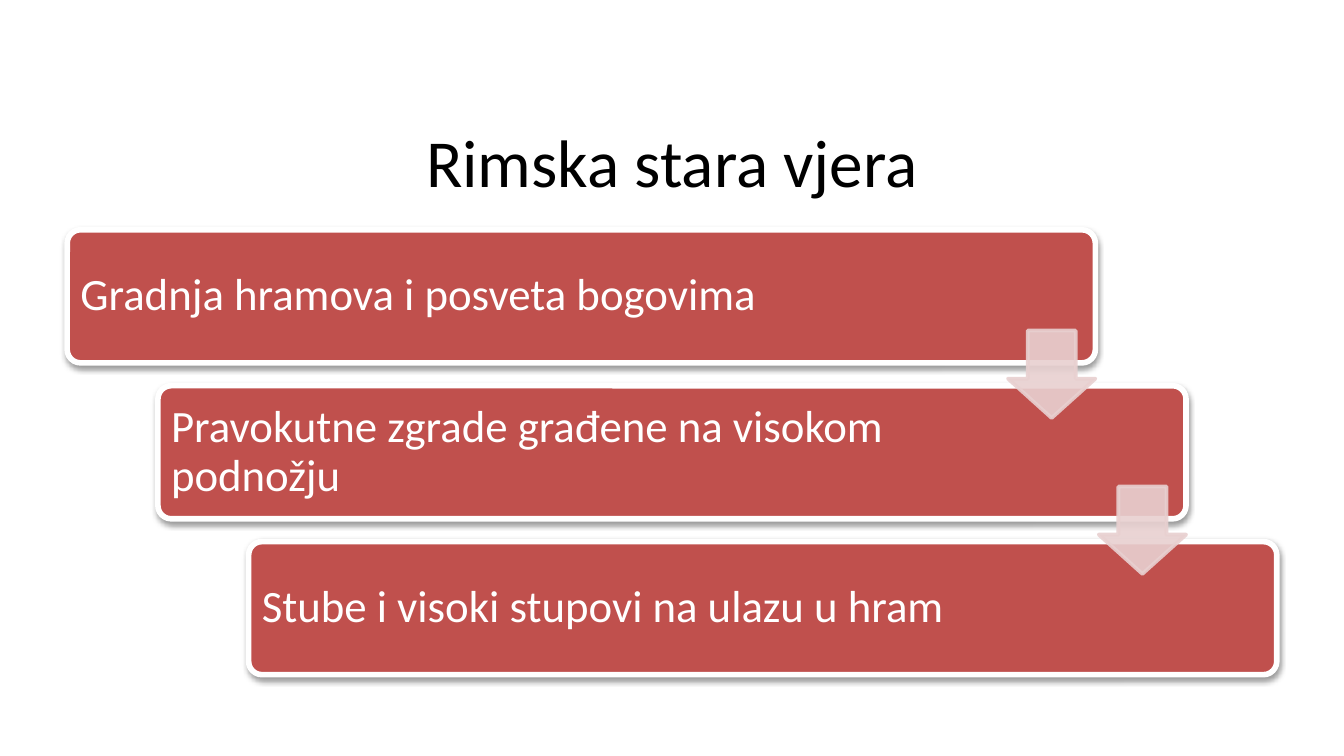
from lxml import etree
from pptx import Presentation
from pptx.dml.color import RGBColor
from pptx.enum.shapes import MSO_SHAPE
from pptx.enum.text import MSO_ANCHOR, PP_ALIGN
from pptx.oxml.ns import qn
from pptx.util import Inches, Pt


def color(value):
    return RGBColor.from_string(value)


def write(text_frame, text, size, text_color, alignment):
    text_frame.word_wrap = True
    text_frame.vertical_anchor = MSO_ANCHOR.MIDDLE
    paragraph = text_frame.paragraphs[0]
    paragraph.alignment = alignment
    paragraph.line_spacing = 0.9
    run = paragraph.add_run()
    run.text = text
    run.font.name = "Calibri"
    run.font.size = Pt(size)
    run.font.color.rgb = color(text_color)


# Widescreen slide, 16:9
presentation = Presentation()
presentation.slide_width = Inches(10)
presentation.slide_height = Inches(10 * 9 / 16)
slide = presentation.slides.add_slide(presentation.slide_layouts[5])

# Title
title = slide.shapes.title
title.left, title.top = Inches(0.5), Inches(0.84)
title.width, title.height = Inches(9), Inches(0.78)
write(title.text_frame, "Rimska stara vjera", 36, "000000", PP_ALIGN.CENTER)

# Staircase of steps: label and width of its text
steps = [
    ("Gradnja hramova i posveta bogovima", 6.64),
    ("Pravokutne zgrade građene na visokom podnožju", 6.33),
    ("Stube i visoki stupovi na ulazu u hram", 6.33),
]
card_width, card_height = 7.65, 0.99
step_x = (9 - card_width) / (len(steps) - 1)
step_y = 1.16
for index, (label, text_width) in enumerate(steps):
    left = Inches(0.5 + index * step_x)
    top = Inches(1.71 + index * step_y)

    card = slide.shapes.add_shape(
        MSO_SHAPE.ROUNDED_RECTANGLE, left, top,
        Inches(card_width), Inches(card_height))
    card.adjustments[0] = 0.1
    card.fill.solid()
    card.fill.fore_color.rgb = color("C0504D")
    card.line.color.rgb = color("FFFFFF")
    card.line.width = Pt(3)

    # Soft shadow straight below the card
    card.shadow.inherit = False
    effects = card._element.spPr.find(qn("a:effectLst"))
    shadow = etree.SubElement(
        effects, qn("a:outerShdw"), blurRad=str(Pt(3.1)), dist=str(Pt(1.6)),
        dir="5400000", rotWithShape="0")
    shadow_color = etree.SubElement(shadow, qn("a:srgbClr"), val="000000")
    etree.SubElement(shadow_color, qn("a:alpha"), val="38000")

    text_box = slide.shapes.add_textbox(
        left, top, Inches(text_width), Inches(card_height))
    text_frame = text_box.text_frame
    text_frame.margin_left = text_frame.margin_right = Inches(0.1)
    text_frame.margin_top = text_frame.margin_bottom = Inches(0.1)
    write(text_frame, label, 24, "FFFFFF", PP_ALIGN.LEFT)

# Translucent arrows from each step to the next
for index in range(len(steps) - 1):
    arrow = slide.shapes.add_shape(
        MSO_SHAPE.DOWN_ARROW, Inches(7.5 + index * step_x),
        Inches(2.46 + index * step_y), Inches(0.65), Inches(0.65))
    arrow.adjustments[0] = 0.55
    arrow.adjustments[1] = 0.45
    arrow.shadow.inherit = False
    arrow.fill.solid()
    arrow.fill.fore_color.rgb = color("E8D0D0")
    arrow.line.color.rgb = color("E8D0D0")
    arrow.line.width = Pt(2)
    for arrow_color in arrow._element.spPr.iter(qn("a:srgbClr")):
        etree.SubElement(arrow_color, qn("a:alpha"), val="90000")

presentation.save("out.pptx")
